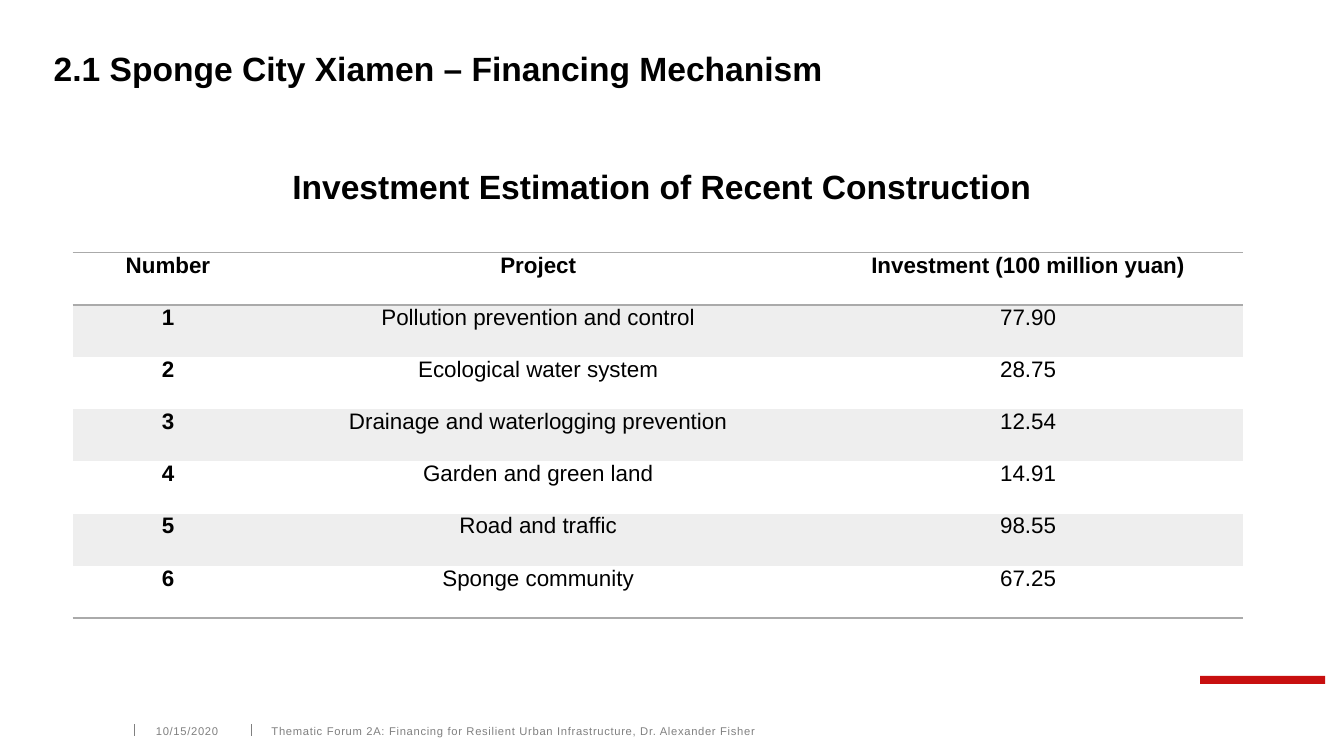
from lxml import etree
from pptx import Presentation
from pptx.dml.color import RGBColor
from pptx.enum.shapes import MSO_CONNECTOR, MSO_SHAPE
from pptx.enum.text import MSO_ANCHOR, PP_ALIGN
from pptx.oxml.ns import qn
from pptx.util import Inches, Pt

STRAIGHT = MSO_CONNECTOR.STRAIGHT
RECTANGLE = MSO_SHAPE.RECTANGLE
BOTTOM, MIDDLE = MSO_ANCHOR.BOTTOM, MSO_ANCHOR.MIDDLE
LEFT, CENTER = PP_ALIGN.LEFT, PP_ALIGN.CENTER
BLACK, GRAY, RULE, BAND, RED = "000000", "808080", "AAAAAA", "EEEEEE", "C80F0F"
NO_STYLE = "{2D5ABB26-0587-4C30-8999-92F81FD0307C}"


def color(value):
    return RGBColor.from_string(value)


def write(frame, text, size, bold, hex_color, alignment, **frame_format):
    for name, value in frame_format.items():
        setattr(frame, name, value)
    paragraph = frame.paragraphs[0]
    paragraph.alignment = alignment
    run = paragraph.add_run()
    run.text = text
    font_format = {"name": "Arial", "size": Pt(size), "bold": bold}
    for name, value in font_format.items():
        setattr(run.font, name, value)
    run.font.color.rgb = color(hex_color)
    return paragraph


presentation = Presentation()
presentation.slide_width = Inches(10)
presentation.slide_height = Inches(10 * 9 / 16)
slide = presentation.slides.add_slide(presentation.slide_layouts[5])
shapes = slide.shapes

accent_bar = shapes.add_shape(RECTANGLE, Inches(8.93), Inches(5.03), Inches(0.93), Inches(0.06))
accent_bar.shadow.inherit = False
accent_bar.fill.solid()
accent_bar.fill.fore_color.rgb = color(RED)
accent_bar.line.fill.background()

for left in (1.87, 1):
    divider = shapes.add_connector(STRAIGHT, Inches(left), Inches(5.39), Inches(left), Inches(5.48))
    divider.line.color.rgb = color(GRAY)
    divider.line.width = Pt(0.75)
    etree.SubElement(divider._element.spPr, qn("a:effectLst"))

title = shapes.title
title.left, title.top = Inches(0.75), Inches(1.03)
title.width, title.height = Inches(8.5), Inches(0.51)
section = shapes.add_textbox(Inches(0.4), Inches(0.07), Inches(7.84), Inches(0.59))
headings = [
    (title, "Investment Estimation of Recent Construction ", CENTER),
    (section, "2.1 Sponge City Xiamen – Financing Mechanism", LEFT),
]
for shape, text, alignment in headings:
    paragraph = write(shape.text_frame, text, 18, True, BLACK, alignment,
                      word_wrap=True, vertical_anchor=BOTTOM, margin_left=0,
                      margin_top=0, margin_right=Inches(0.08), margin_bottom=0)
    paragraph.line_spacing = 0.9

footers = [
    (2.02, 6.32, "Thematic Forum 2A: Financing for Resilient Urban Infrastructure, Dr. Alexander Fisher"),
    (1.16, 0.58, "10/15/2020"),
]
for left, width, text in footers:
    footer = shapes.add_textbox(Inches(left), Inches(5.39), Inches(width), Inches(0.1))
    paragraph = write(footer.text_frame, text, 6, False, GRAY, LEFT,
                      word_wrap=True, vertical_anchor=MIDDLE, margin_left=0,
                      margin_top=0, margin_right=0, margin_bottom=0)
    paragraph.runs[0].font._element.set("spc", "37")

rows = [
    ("Number", "Project", "Investment (100 million yuan)"),
    ("1", "Pollution prevention and control", "77.90"),
    ("2", "Ecological water system", "28.75"),
    ("3", "Drainage and waterlogging prevention", "12.54"),
    ("4", "Garden and green land", "14.91"),
    ("5", "Road and traffic", "98.55"),
    ("6", "Sponge community", "67.25"),
]
column_widths = (1.42, 4.09, 3.2)
last_row = len(rows) - 1
borders = {0: ("a:lnT", "a:lnB"), last_row: ("a:lnB",)}
table = shapes.add_table(len(rows), len(column_widths), Inches(0.54), Inches(1.88),
                         Inches(8.71), Inches(2.72)).table
table.first_row = table.horz_banding = False
table._tbl.tblPr.find(qn("a:tableStyleId")).text = NO_STYLE
for column, width in zip(table.columns, column_widths):
    column.width = Inches(width)

for row_index, row in enumerate(rows):
    for column_index, text in enumerate(row):
        cell = table.cell(row_index, column_index)
        cell.margin_left = cell.margin_right = Inches(0.06)
        cell.margin_top = cell.margin_bottom = 0
        bold = row_index == 0 or column_index == 0
        write(cell.text_frame, text, 12, bold, BLACK, CENTER)
        for side in borders.get(row_index, ()):
            border = etree.SubElement(cell._tc.get_or_add_tcPr(), qn(side), w=str(Pt(1)))
            border_fill = etree.SubElement(border, qn("a:solidFill"))
            etree.SubElement(border_fill, qn("a:srgbClr"), val=RULE)
        if row_index % 2:
            cell.fill.solid()
            cell.fill.fore_color.rgb = color(BAND)
        else:
            cell.fill.background()

presentation.save("out.pptx")
